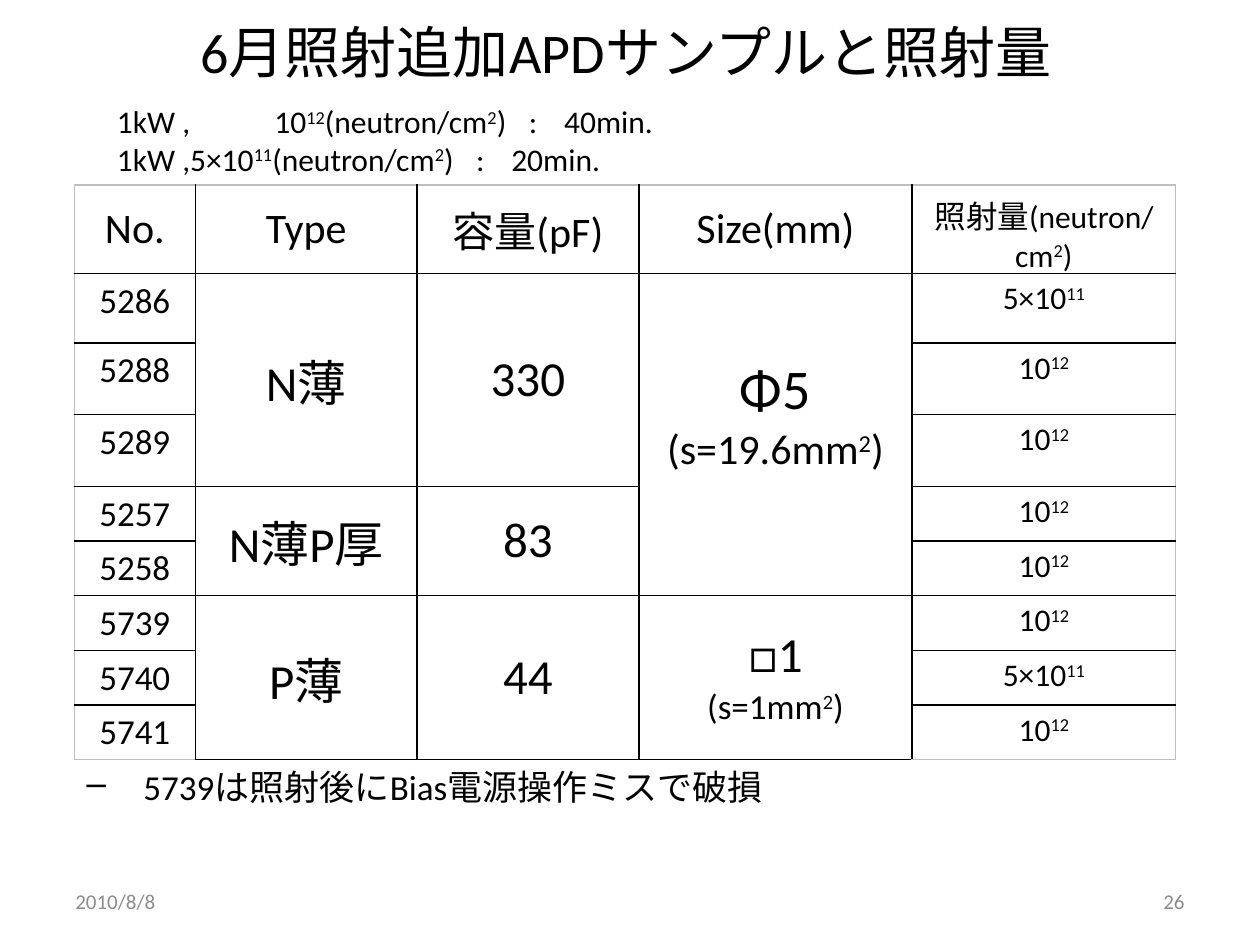
import dataclasses

import lxml.etree
import pptx
import pptx.dml.color
import pptx.enum.lang
import pptx.enum.text
import pptx.oxml.ns
import pptx.util

Inches = pptx.util.Inches
Pt = pptx.util.Pt
ALIGN = pptx.enum.text.PP_ALIGN
ANCHOR = pptx.enum.text.MSO_ANCHOR
qn = pptx.oxml.ns.qn


@dataclasses.dataclass(frozen=True)
class Theme:
    font: str = "Calibri"
    text: str = "000000"
    muted: str = "8C8C8C"
    frame: str = "BFBFBF"
    title: int = 32
    large: int = 28
    header: int = 24
    number: int = 20
    body: int = 18
    footer: int = 12


theme = Theme()


def add_runs(paragraph, text, size, color=theme.text, align=ALIGN.LEFT):
    """Write text run by run; pieces between ^ marks are superscript."""
    paragraph.alignment = align
    for index, piece in enumerate(text.split("^")):
        if not piece:
            continue
        run = paragraph.add_run()
        run.text = piece
        run.font.name = theme.font
        run.font.size = Pt(size)
        run.font.color.rgb = pptx.dml.color.RGBColor.from_string(color)
        run.font.language_id = pptx.enum.lang.MSO_LANGUAGE_ID.JAPANESE
        if index % 2:
            run._r.get_or_add_rPr().set("baseline", "30000")


def add_text_box(left, top, width, height, anchor):
    frame = slide.shapes.add_textbox(
        Inches(left), Inches(top), Inches(width), Inches(height)).text_frame
    frame.word_wrap = True
    frame.vertical_anchor = anchor
    return frame


presentation = pptx.Presentation()
presentation.slide_width = Inches(10)
presentation.slide_height = Inches(7.5)
slide = presentation.slides.add_slide(presentation.slide_layouts[6])

# Title
frame = add_text_box(0.47, 0.05, 9, 0.71, ANCHOR.MIDDLE)
add_runs(frame.paragraphs[0], "6月照射追加APDサンプルと照射量", theme.title, align=ALIGN.CENTER)

# Sample table: (lines of text and size) for each cell
column_widths = [0.96, 1.76, 1.76, 2.17, 2.09]
row_heights = [0.63, 0.55, 0.57, 0.57] + [0.39] * 5
headers = ["No.", "Type", "容量(pF)", "Size(mm)"]
samples = [
    ("5286", "5×10^11"), ("5288", "10^12"), ("5289", "10^12"), ("5257", "10^12"),
    ("5258", "10^12"), ("5739", "10^12"), ("5740", "5×10^11"), ("5741", "10^12"),
]
# First row, column, rows spanned, lines
merged_cells = [
    (1, 1, 3, [("N薄", theme.large)]),
    (1, 2, 3, [("330", theme.large)]),
    (1, 3, 5, [("Φ5", theme.title), ("(s=19.6mm^2^)", theme.header)]),
    (4, 1, 2, [("N薄P厚", theme.large)]),
    (4, 2, 2, [("83", theme.large)]),
    (6, 1, 3, [("P薄", theme.large)]),
    (6, 2, 3, [("44", theme.large)]),
    (6, 3, 3, [("□1", theme.large), ("(s=1mm^2^)", theme.number)]),
]
last_row, last_column = len(row_heights) - 1, len(column_widths) - 1
table = slide.shapes.add_table(
    last_row + 1, last_column + 1,
    Inches(0.59), Inches(1.47), Inches(8.74), Inches(4.55)).table
table.first_row = table.horz_banding = False
for column, width in zip(table.columns, column_widths):
    column.width = Inches(width)
for row, height in zip(table.rows, row_heights):
    row.height = Inches(height)

contents = {(0, column): [(text, theme.header)] for column, text in enumerate(headers)}
contents[0, last_column] = [("照射量(neutron/cm^2^)", theme.body)]
for row, (number, dose) in enumerate(samples, start=1):
    contents[row, 0] = [(number, theme.number)]
    contents[row, last_column] = [(dose, theme.body)]
for row, column, span, lines in merged_cells:
    table.cell(row, column).merge(table.cell(row + span - 1, column))
    contents[row, column] = lines

for row in range(last_row + 1):
    for column in range(last_column + 1):
        cell = table.cell(row, column)
        # Black inner rules, pale outer frame
        outer_sides = {"lnL": column == 0, "lnR": column == last_column,
                       "lnT": row == 0, "lnB": row == last_row}
        properties = cell._tc.get_or_add_tcPr()
        for side, is_outer in outer_sides.items():
            line = lxml.etree.SubElement(properties, qn(f"a:{side}"), w=str(Pt(1)))
            fill = lxml.etree.SubElement(line, qn("a:solidFill"))
            lxml.etree.SubElement(fill, qn("a:srgbClr"),
                                  val=theme.frame if is_outer else theme.text)
        cell.fill.background()
        inner = 0 < column < last_column
        cell.vertical_anchor = (
            ANCHOR.MIDDLE if inner or (row, column) == (0, 0) else ANCHOR.TOP)
        for index, (text, size) in enumerate(contents.get((row, column), [])):
            paragraphs = cell.text_frame
            paragraph = paragraphs.add_paragraph() if index else paragraphs.paragraphs[0]
            add_runs(paragraph, text, size, align=ALIGN.CENTER)

# The diameter sits above the middle of its tall cell
diameter_cell = table.cell(1, 3)
diameter_cell.vertical_anchor = ANCHOR.TOP
diameter_cell.margin_top = Inches(0.66)

# Irradiation times, lined up with tab stops
times = [
    ("1kW ,\t10^12^(neutron/cm^2^)\t:\t40min.", [1.25, 3.27, 3.55]),
    ("1kW ,5×10^11^(neutron/cm^2^)\t:\t20min.", [2.85, 3.13]),
]
frame = add_text_box(0.83, 0.76, 4.57, 0.71, ANCHOR.TOP)
for index, (text, stops) in enumerate(times):
    paragraph = frame.add_paragraph() if index else frame.paragraphs[0]
    add_runs(paragraph, text, theme.body)
    tab_list = lxml.etree.SubElement(paragraph._p.get_or_add_pPr(), qn("a:tabLst"))
    for stop in stops:
        lxml.etree.SubElement(tab_list, qn("a:tab"), pos=str(Inches(stop)), algn="l")

# Date and slide number
for left, text, align in [(0.5, "2010/8/8", ALIGN.LEFT), (7.17, "26", ALIGN.RIGHT)]:
    frame = add_text_box(left, 6.95, 2.33, 0.4, ANCHOR.MIDDLE)
    add_runs(frame.paragraphs[0], text, theme.footer, theme.muted, align)

# Bulleted remark
frame = add_text_box(0.59, 6.03, 8.74, 0.44, ANCHOR.TOP)
paragraph = frame.paragraphs[0]
add_runs(paragraph, "5739は照射後にBias電源操作ミスで破損", theme.number)
properties = paragraph._p.get_or_add_pPr()
properties.set("marL", str(Inches(0.45)))
properties.set("indent", str(Inches(-0.45)))
lxml.etree.SubElement(properties, qn("a:buChar"), char="–")

presentation.save("out.pptx")
